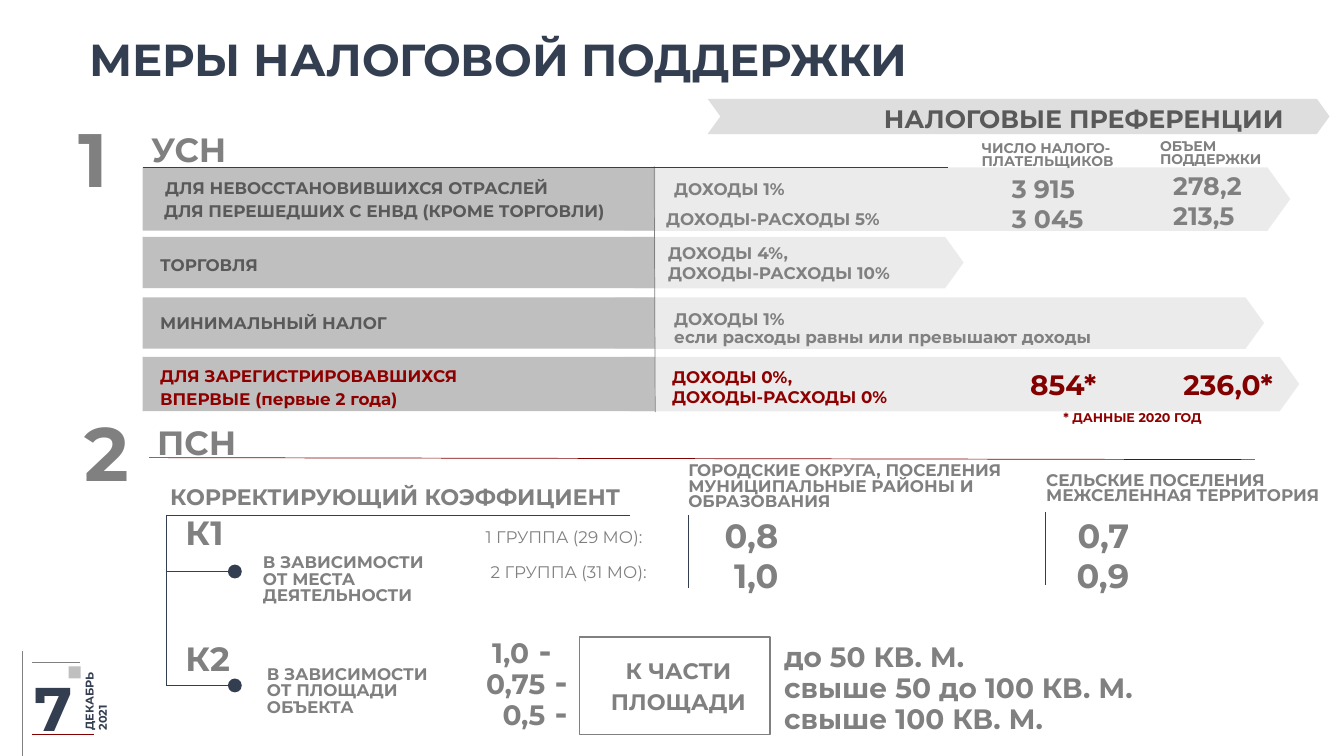
from lxml import etree
from pptx import Presentation
from pptx.dml.color import RGBColor
from pptx.enum.shapes import MSO_CONNECTOR, MSO_SHAPE
from pptx.enum.text import MSO_ANCHOR, PP_ALIGN
from pptx.oxml.ns import qn
from pptx.util import Inches, Pt

LEFT, CENTER, RIGHT = PP_ALIGN.LEFT, PP_ALIGN.CENTER, PP_ALIGN.RIGHT
TOP, MIDDLE = MSO_ANCHOR.TOP, MSO_ANCHOR.MIDDLE
RECT, CHEVRON = MSO_SHAPE.RECTANGLE, MSO_SHAPE.CHEVRON
STRAIGHT = MSO_CONNECTOR.STRAIGHT

FONT = "Montserrat"
NAVY, GRAY, DARK = "333F50", "808080", "595959"
RED, WINE = "8E0000", "820000"
SILVER, PALE, WHITE = "BFBFBF", "D9D9D9", "FFFFFF"
COLS, ROWS = 133.33, 75
WIDTH, HEIGHT = Inches(13.33), Inches(7.5)
LABEL_LEFT, LABEL_RIGHT = 14.15, 65


def x(col):
    return round(WIDTH * col / COLS)


def y(row):
    return round(HEIGHT * row / ROWS)


def rgb(value):
    return RGBColor.from_string(value)


def box(s, kind, left, top, width, height, fill, line=None):
    sp = s.shapes.add_shape(kind, x(left), y(top), x(width), y(height))
    sp.shadow.inherit = False
    sp.fill.solid()
    sp.fill.fore_color.rgb = rgb(fill)
    if line:
        sp.line.color.rgb = rgb(line)
        sp.line.width = Pt(1)
    else:
        sp.line.fill.background()
    return sp


def arrow(s, left, top, width, height, fill):
    sp = box(s, CHEVRON, left, top, width, height, fill)
    sp.adjustments[0] = 0.36
    color = sp.fill._xPr.find(qn("a:solidFill"))[0]
    etree.SubElement(color, qn("a:alpha")).set("val", "50000")


def line(s, x1, y1, x2, y2, color, dot=False):
    cx = s.shapes.add_connector(STRAIGHT, x(x1), y(y1), x(x2), y(y2))
    cx.line.color.rgb = rgb(color)
    cx.line.width = Pt(0.5)
    if dot:
        ln = cx.line._get_or_add_ln()
        end = etree.SubElement(ln, qn("a:tailEnd"))
        for key, value in (("type", "oval"), ("w", "lg"), ("len", "lg")):
            end.set(key, value)
    etree.SubElement(cx._element.spPr, qn("a:effectLst"))


def text(s, left, top, width, height, paragraphs, size, color=GRAY,
         spacing=None, align=LEFT, anchor=MIDDLE, bold=True):
    sp = s.shapes.add_textbox(x(left), y(top), x(width), y(height))
    tf = sp.text_frame
    tf.word_wrap = True
    tf.vertical_anchor = anchor
    for i, runs in enumerate(paragraphs):
        p = tf.add_paragraph() if i else tf.paragraphs[0]
        p.alignment = align
        if spacing:
            p.line_spacing = Pt(spacing)
        for run in [(runs, size)] if isinstance(runs, str) else runs:
            r = p.add_run()
            r.text = run[0]
            r.font.size = Pt(run[1])
            r.font.name = FONT
            r.font.bold = bold
            r.font.color.rgb = rgb(color)
    return sp


def heading(s):
    text(s, 7.9, 2.1, 88.9, 7.4, ["МЕРЫ НАЛОГОВОЙ ПОДДЕРЖКИ"], 32, NAVY)
    arrow(s, 70.2, 9.8, 61.7, 3.5, SILVER)
    text(s, 86.7, 9.2, 44.6, 5, ["НАЛОГОВЫЕ ПРЕФЕРЕНЦИИ"], 18, DARK, 22)


def section(s, number, name, num_left, num_top, left, top):
    text(s, num_left, num_top, 9.1, 10.4, [number], 54, spacing=32)
    text(s, left, top, 48.4, 3.5, [name], 24, spacing=22)


def rate_bars(s):
    for top, height, left, right in ((16.6, 6.3, 61.9, 128),
                                     (23.5, 5.1, 62.9, 95.6),
                                     (29.5, 5.1, 61, 125.4),
                                     (35.4, 5.4, 62.5, 128.9)):
        arrow(s, left, top, right - left, height, PALE)
        box(s, RECT, LABEL_LEFT, top, LABEL_RIGHT - LABEL_LEFT, height, SILVER)
    line(s, 64.9, 16.5, 65, 40.9, GRAY)


def simplified_tax(s):
    section(s, "1", "УСН", 6.8, 12.7, 14, 13.5)
    rate_bars(s)
    line(s, 14.2, 16.6, 94, 16.6, NAVY)
    for left, top, width, height, label, color in (
            (15.4, 16.7, 49.7, 3.7, "ДЛЯ НЕВОССТАНОВИВШИХСЯ ОТРАСЛЕЙ", DARK),
            (15.3, 19.6, 49.5, 2.5, "ДЛЯ ПЕРЕШЕДШИХ С ЕНВД (КРОМЕ ТОРГОВЛИ)", DARK),
            (14.9, 24.4, 31.5, 3.6, "ТОРГОВЛЯ", DARK),
            (14.9, 30.1, 31.5, 3.6, "МИНИМАЛЬНЫЙ НАЛОГ", DARK),
            (14.9, 36.5, 33.1, 3.6,
             "ДЛЯ ЗАРЕГИСТРИРОВАВШИХСЯ ВПЕРВЫЕ (первые 2 года)", RED)):
        text(s, left, top, width, height, [label], 12, color, 16)
    for left, top, width, height, rates, color, spacing in (
            (65.9, 16.7, 24.8, 3, ["ДОХОДЫ 1%"], GRAY, 22),
            (65.1, 19, 28.4, 4.3, ["ДОХОДЫ-РАСХОДЫ 5%"], GRAY, 22),
            (65.3, 24.7, 27.9, 2.7, ["ДОХОДЫ 4%,", "ДОХОДЫ-РАСХОДЫ 10%"], GRAY, None),
            (65.9, 29.6, 24.8, 3, ["ДОХОДЫ 1%"], GRAY, 22),
            (65.9, 31.3, 62.3, 4.3,
             ["если расходы равны или превышают доходы"], GRAY, None),
            (65.7, 36.6, 24.8, 3.5, ["ДОХОДЫ 0%,", "ДОХОДЫ-РАСХОДЫ 0%"], RED, None)):
        text(s, left, top, width, height, rates, 12, color, spacing)
    text(s, 96.4, 12.9, 17.5, 5.3, ["ЧИСЛО НАЛОГО-ПЛАТЕЛЬЩИКОВ"], 10, spacing=9)
    text(s, 114.1, 12.7, 16.3, 5.3, ["ОБЪЕМ ПОДДЕРЖКИ"], 10, spacing=9)
    for left, top, values, size, color in (
            (99.4, 16.6, ["3 915", "3 045"], 18, GRAY),
            (115.4, 16.3, ["278,2", "213,5"], 18, GRAY),
            (101.2, 36.2, ["854*"], 20, WINE),
            (116.4, 36.2, ["236,0*"], 20, WINE)):
        text(s, left, top, 16.3, 4.2, values, size, color, 22, anchor=TOP)
    text(s, 104.5, 39.3, 28.8, 3.6, ["* ДАННЫЕ 2020 ГОД"], 9, RED, 16)


def coefficient_tree(s):
    text(s, 15.9, 47.6, 53.3, 3.7, ["КОРРЕКТИРУЮЩИЙ КОЭФФИЦИЕНТ"], 16, spacing=16)
    line(s, 16.5, 51.1, 16.5, 68, NAVY)
    line(s, 16.5, 51.1, 62.5, 51.1, NAVY)
    for name, name_top, dot_row, left, top, basis in (
            ("К1", 51.5, 56.7, 25.1, 54.7, "ОТ МЕСТА ДЕЯТЕЛЬНОСТИ"),
            ("К2", 64, 68, 25.5, 65.8, "ОТ ПЛОЩАДИ ОБЪЕКТА")):
        text(s, 17.4, name_top, 11, 3.5, [name], 24, spacing=22)
        line(s, 16.5, dot_row, 23.3, dot_row, NAVY, dot=True)
        text(s, left, top, 20.5, 5.7, ["В ЗАВИСИМОСТИ", basis], 12, spacing=12)


def patent_tax(s):
    section(s, "2", "ПСН", 7.4, 41.8, 14.6, 42.6)
    line(s, 14.8, 45.4, 124.5, 45.6, WINE)
    coefficient_tree(s)
    text(s, 47.2, 51.2, 20.5, 4.1, ["1 ГРУППА (29 МО):"], 12, bold=False)
    text(s, 47.7, 54.7, 20.4, 4.1, ["2 ГРУППА (31 МО):"], 12, bold=False)
    text(s, 67.3, 45.9, 34.9, 5, ["ГОРОДСКИЕ ОКРУГА, ПОСЕЛЕНИЯ",
         "МУНИЦИПАЛЬНЫЕ РАЙОНЫ И ОБРАЗОВАНИЯ"], 12, spacing=11)
    text(s, 102.8, 46.5, 33.3, 4.1,
         ["СЕЛЬСКИЕ ПОСЕЛЕНИЯ", "МЕЖСЕЛЕННАЯ ТЕРРИТОРИЯ"], 12, spacing=11)
    for rule, top, left, middle, values in (
            (68.3, 51.1, 70.1, 55.05, ["0,8", "1,0"]),
            (103.7, 50.8, 104.9, 55.05, ["0,7", "0,9"])):
        line(s, rule, top, rule, top + 7.2, NAVY)
        text(s, left, middle - 4, 8.1, 8, values, 24, align=RIGHT)
    box(s, RECT, 57.5, 63.2, 18.9, 9.7, WHITE, GRAY)
    text(s, 58, 65.8, 18.6, 4.2, ["К ЧАСТИ ПЛОЩАДИ"], 16, spacing=22, align=CENTER)
    for i, (value, right) in enumerate((("1,0", 55.7), ("0,75", 57.3), ("0,5", 57.3))):
        text(s, right - 15, 63.2 + 3.06 * i, 15, 3.6,
             [[(value, 20), (" -", 24)]], 20, spacing=22, align=RIGHT)
    text(s, 76.8, 63.2, 45.5, 10.2, ["до 50 КВ. М.", "свыше 50 до 100 КВ. М.",
         "свыше 100 КВ. М."], 20, spacing=22)


def page_mark(s):
    box(s, RECT, 6.8, 66.1, 1.2, 1.2, SILVER)
    line(s, 2.2, 64.6, 2.2, 75, GRAY)
    line(s, 7.9, 65.7, 3.2, 65.7, GRAY)
    line(s, 9.3, 72.9, 3.2, 72.9, WINE)
    text(s, 5, 66.2, 9, 5.5, ["ДЕКАБРЬ 2021"], 8, NAVY).rotation = 270
    text(s, 2.4, 67.4, 6.9, 5.5, ["7"], 44, NAVY)


def main():
    prs = Presentation()
    prs.slide_width, prs.slide_height = WIDTH, HEIGHT
    s = prs.slides.add_slide(prs.slide_layouts[6])
    heading(s)
    simplified_tax(s)
    patent_tax(s)
    page_mark(s)
    prs.save("out.pptx")


if __name__ == "__main__":
    main()
